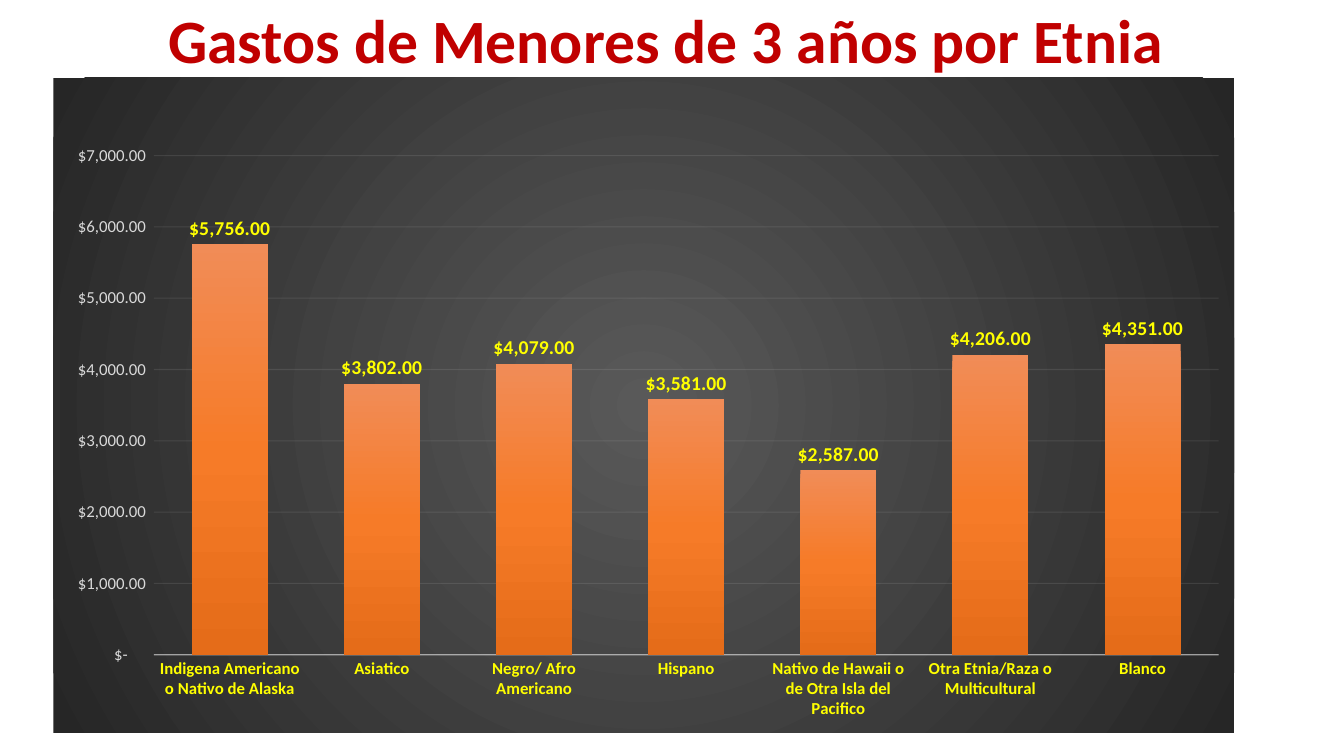
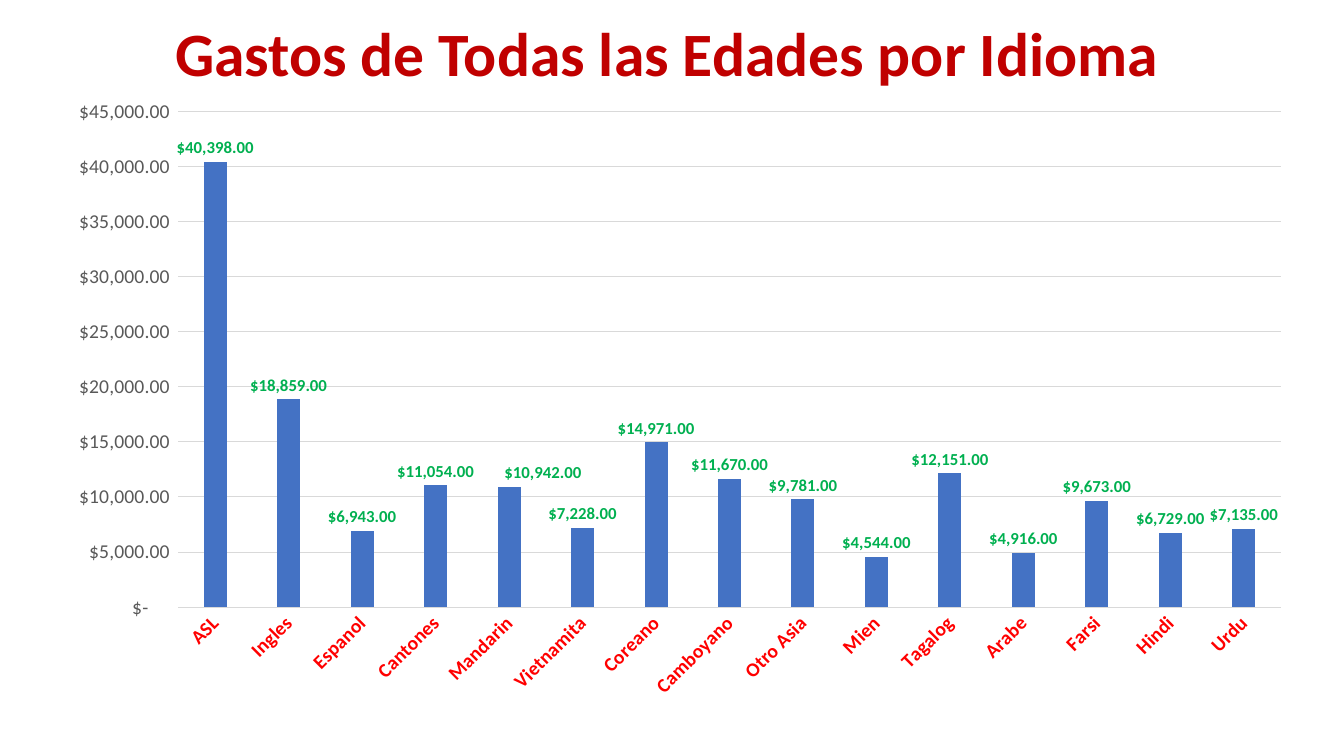
import dataclasses

import pptx
import pptx.chart.data
import pptx.dml.color
import pptx.enum.chart
import pptx.enum.text
import pptx.oxml
import pptx.oxml.ns
import pptx.util

Inches = pptx.util.Inches
Pt = pptx.util.Pt
MONEY = r'_("$"* #,##0.00_);_("$"* \(#,##0.00\);_("$"* "-"??_);_(@_)'
NS = pptx.oxml.ns.nsdecls("a", "c")
AUTO_ROTATION = "-60000000"


@dataclasses.dataclass(frozen=True)
class Theme:
    font: str = "Calibri"
    title: str = "C00000"
    title_size: int = 44
    pale: str = "F2F2F2"
    rule: str = "D9D9D9"
    gray: str = "595959"
    yellow: str = "FFFF00"
    red: str = "FF0000"
    green: str = "00B050"
    blue: str = "4472C4"
    orange: tuple = ((0, "F18C57"), (50, "F67B28"), (100, "E56C19"))
    dark: tuple = ((0, "595959"), (100, "262626"))
    linear: str = '<a:lin ang="5400000" scaled="0"/>'
    radial: str = ('<a:path path="circle"><a:fillToRect l="50000" t="50000" '
                   'r="50000" b="50000"/></a:path>')


THEME = Theme()


def rgb(color):
    return pptx.dml.color.RGBColor.from_string(color)


def set_font(font, size, color, bold=False):
    font.name = THEME.font
    font.size = Pt(size)
    font.bold = bold
    font.color.rgb = rgb(color)


def add_text(s, text, box, *, size, color, bold=False):
    sp = s.shapes.add_textbox(*map(Inches, box))
    tf = sp.text_frame
    tf.word_wrap = True
    tf.vertical_anchor = pptx.enum.text.MSO_ANCHOR.MIDDLE
    p = tf.paragraphs[0]
    p.alignment = pptx.enum.text.PP_ALIGN.CENTER
    p.line_spacing = 0.9
    r = p.add_run()
    r.text = text
    set_font(r.font, size, color, bold)


def add_title(s, text, left, top, height):
    add_text(s, text, (left, top, 11.5, height), size=THEME.title_size,
             color=THEME.title, bold=True)


def gradient(stops, shade):
    gs = "".join(f'<a:gs pos="{pos * 1000}"><a:srgbClr val="{color}"/></a:gs>'
                 for pos, color in stops)
    return pptx.oxml.parse_xml(
        f'<a:gradFill {NS} rotWithShape="1"><a:gsLst>{gs}</a:gsLst>{shade}</a:gradFill>')


def manual_layout(target="", **values):
    parts = "".join(f'<c:{key} val="{value}"/>' for key, value in values.items())
    return pptx.oxml.parse_xml(
        f'<c:layout {NS}><c:manualLayout>{target}{parts}</c:manualLayout></c:layout>')


def set_plot(chart, x, y, w, h):
    area = chart.element.xpath("c:chart/c:plotArea")[0]
    for old in area.xpath("c:layout"):
        area.remove(old)
    area.insert(0, manual_layout('<c:layoutTarget val="inner"/>', xMode="edge",
                                 yMode="edge", x=x, y=y, w=w, h=h))


def set_alpha(chart, query, percent):
    for color in chart.element.xpath(f"{query}/c:spPr//a:srgbClr"):
        color.append(pptx.oxml.parse_xml(f'<a:alpha {NS} val="{percent * 1000}"/>'))


def set_chart_fill(chart, fill):
    sp_pr = pptx.oxml.parse_xml(f"<c:spPr {NS}><a:ln><a:noFill/></a:ln></c:spPr>")
    sp_pr.insert(0, fill)
    chart.element.xpath("c:chart")[0].addnext(sp_pr)


def set_series_gradient(chart, fill):
    solid = chart.element.xpath(".//c:ser/c:spPr/a:solidFill")[0]
    solid.getparent().replace(solid, fill)


def auto_rotate_labels(chart):
    for body in chart.element.xpath(".//c:catAx/c:txPr/a:bodyPr"):
        body.set("rot", AUTO_ROTATION)
        body.set("vert", "horz")


def shift_label(chart, index, dx, *, size, color):
    label = chart.plots[0].series[0].points[index].data_label
    set_font(label.font, size, color, True)
    label.position = pptx.enum.chart.XL_LABEL_POSITION.OUTSIDE_END
    idx = chart.element.xpath(f".//c:dLbl/c:idx[@val='{index}']")[0]
    idx.addnext(manual_layout(x=dx, y=0))


def style_axis(axis, size, color, bold=False):
    axis.major_tick_mark = axis.minor_tick_mark = pptx.enum.chart.XL_TICK_MARK.NONE
    set_font(axis.tick_labels.font, size, color, bold)


def style_line(line, color, width):
    line.color.rgb = rgb(color)
    line.width = Pt(width)


def add_columns(s, data, box, *, gap, overlap, fill, axis_size, cat_color, val_color,
                line, line_width, grid, label_size, label_color):
    cd = pptx.chart.data.CategoryChartData(number_format=MONEY)
    cd.categories = list(data)
    cd.add_series("Series 1", list(data.values()))
    kind = pptx.enum.chart.XL_CHART_TYPE.COLUMN_CLUSTERED
    chart = s.shapes.add_chart(kind, *map(Inches, box), cd).chart
    chart.has_title = chart.has_legend = False
    chart.font.name = THEME.font
    chart.font.size = Pt(axis_size)

    plot = chart.plots[0]
    plot.gap_width = gap
    plot.overlap = overlap
    plot.vary_by_categories = False
    ser = plot.series[0]
    ser.invert_if_negative = False
    ser.format.fill.solid()
    ser.format.fill.fore_color.rgb = rgb(fill)
    labels = ser.data_labels
    labels.show_value = True
    labels.position = pptx.enum.chart.XL_LABEL_POSITION.OUTSIDE_END
    labels.number_format = MONEY
    labels.number_format_is_linked = False
    set_font(labels.font, label_size, label_color, True)

    cat, val = chart.category_axis, chart.value_axis
    style_axis(cat, axis_size, cat_color, True)
    style_line(cat.format.line, line, line_width)
    auto_rotate_labels(chart)
    style_axis(val, axis_size, val_color)
    val.format.line.fill.background()
    val.tick_labels.number_format = MONEY
    val.tick_labels.number_format_is_linked = False
    val.has_major_gridlines = True
    style_line(val.major_gridlines.format.line, grid, 0.75)
    return chart


def add_ethnicity_slide(s):
    add_title(s, "Gastos de Menores de 3 años por Etnia", 0.86, 0, 0.86)
    spending = {
        "Indigena Americano o Nativo de Alaska": 5756,
        "Asiatico": 3802,
        "Negro/ Afro Americano": 4079,
        "Hispano": 3581,
        "Nativo de Hawaii o de Otra Isla del Pacifico": 2587,
        "Otra Etnia/Raza o Multicultural": 4206,
        "Blanco": 4351,
    }
    chart = add_columns(
        s, spending, (0.53, 0.77, 11.71, 6.5), gap=100, overlap=-24,
        fill=THEME.orange[1][1], axis_size=12, cat_color=THEME.yellow,
        val_color=THEME.rule, line=THEME.pale, line_width=1, grid=THEME.pale,
        label_size=14, label_color=THEME.yellow)
    set_plot(chart, 0.085, 0.119, 0.902, 0.762)
    set_series_gradient(chart, gradient(THEME.orange, THEME.linear))
    set_chart_fill(chart, gradient(THEME.dark, THEME.radial))
    set_alpha(chart, ".//c:catAx", 54)
    set_alpha(chart, ".//c:majorGridlines", 10)


def add_language_slide(s):
    add_title(s, "Gastos de Todas las Edades por Idioma", 0.87, 0.14, 0.84)
    spending = {
        "ASL": 40398, "Ingles": 18859, "Espanol": 6943, "Cantones": 11054,
        "Mandarin": 10942, "Vietnamita": 7228, "Coreano": 14971,
        "Camboyano": 11670, "Otro Asia": 9781, "Mien": 4544, "Tagalog": 12151,
        "Arabe": 4916, "Farsi": 9673, "Hindi": 6729, "Urdu": 7135,
    }
    label = {"size": 12, "color": THEME.green}
    chart = add_columns(
        s, spending, (0.49, 0.86, 12.46, 6.19), gap=219, overlap=-27,
        fill=THEME.blue, axis_size=14, cat_color=THEME.red,
        val_color=THEME.gray, line=THEME.rule, line_width=0.75, grid=THEME.rule,
        label_size=label["size"], label_color=label["color"])
    shift_label(chart, list(spending).index("Mandarin"), 0.027, **label)


def main():
    prs = pptx.Presentation()
    prs.slide_width, prs.slide_height = Inches(13.33), Inches(7.5)
    for build in (add_ethnicity_slide, add_language_slide):
        build(prs.slides.add_slide(prs.slide_layouts[6]))
    prs.save("out.pptx")


if __name__ == "__main__":
    main()
